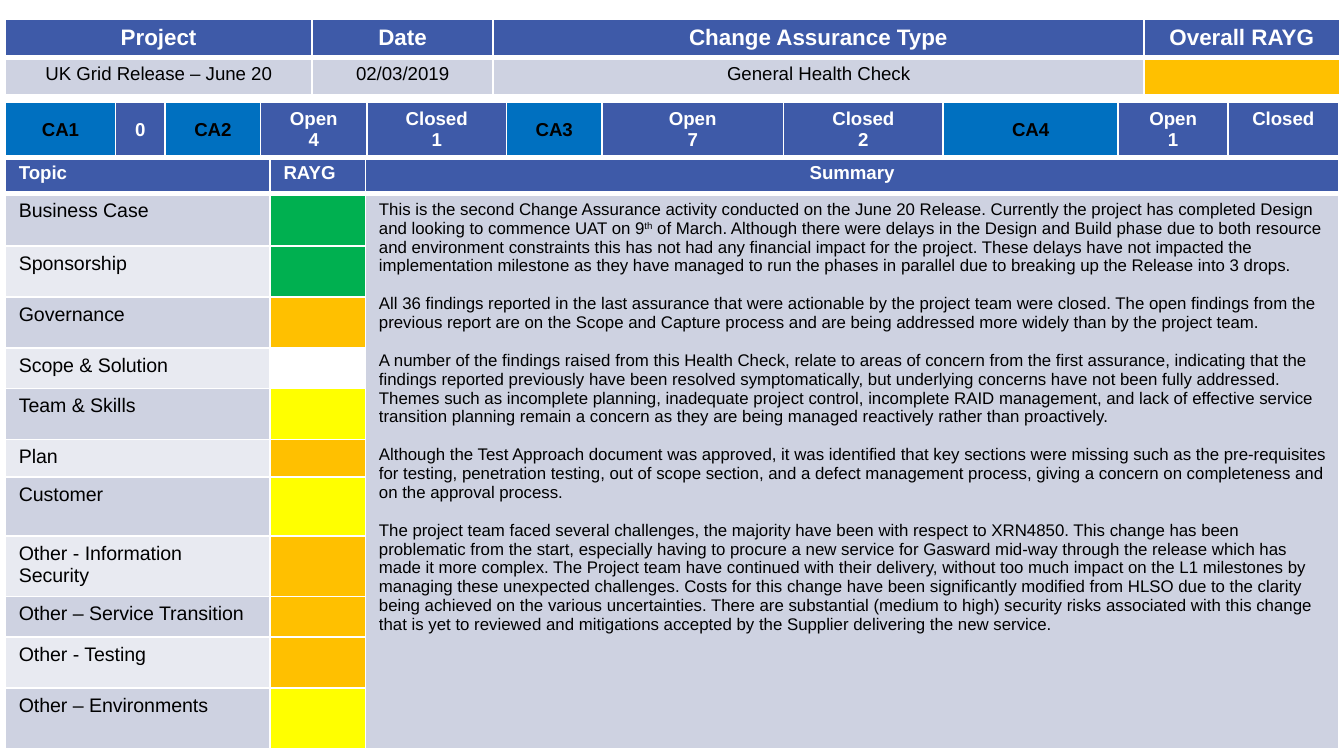
from dataclasses import dataclass

from lxml import etree
from pptx import Presentation
from pptx import util as u
from pptx.dml.color import RGBColor
from pptx.enum import text
from pptx.oxml.ns import qn


@dataclass(frozen=True)
class Theme:
    font: str = "Arial"
    white: str = "FFFFFF"
    black: str = "000000"
    header: str = "3E5AA8"
    activity: str = "0070C0"
    band_dark: str = "CED2E1"
    band_light: str = "E8EAF1"
    green: str = "00B050"
    amber: str = "FFC000"
    yellow: str = "FFFF00"
    title_size: float = 12
    label_size: float = 10
    topic_size: float = 10.5
    summary_size: float = 9
    summary_gap: float = 10.2
    thin: float = 1
    thick: float = 3


THEME = Theme()
CENTER = text.PP_ALIGN.CENTER
LEFT, WIDTH = 0.04, 9.92

PROJECT = [
    ("Project", "UK Grid Release – June 20"),
    ("Date", "02/03/2019"),
    ("Change Assurance Type", "General Health Check"),
    ("Overall RAYG", ""),
]
FINDINGS = ["CA1", "0", "CA2", "Open\n4", "Closed\n1", "CA3", "Open\n7",
            "Closed\n2", "CA4", "Open\n1", "Closed"]
# Topic, rating colour, row height
TOPICS = [
    ("Business Case", THEME.green, 0.39),
    ("Sponsorship", THEME.green, 0.38),
    ("Governance", THEME.amber, 0.38),
    ("Scope & Solution", None, 0.3),
    ("Team & Skills", THEME.yellow, 0.38),
    ("Plan", THEME.amber, 0.28),
    ("Customer", THEME.yellow, 0.44),
    ("Other - Information Security", THEME.amber, 0.45),
    ("Other – Service Transition", THEME.amber, 0.3),
    ("Other - Testing", THEME.amber, 0.38),
    ("Other – Environments", THEME.yellow, 0.45),
]
# A caret pair encloses superscript text
SUMMARY = [
    "This is the second Change Assurance activity conducted on the June 20 Release. Currently the project has completed Design and looking to commence UAT on 9^th^ of March. Although there were delays in the Design and Build phase due to both resource and environment constraints this has not had any financial impact for the project. These delays have not impacted the implementation milestone as they have managed to run the phases in parallel due to breaking up the Release into 3 drops.",
    "All 36 findings reported in the last assurance that were actionable by the project team were closed. The open findings from the previous report are on the Scope and Capture process and are being addressed more widely than by the project team.",
    "A number of the findings raised from this Health Check, relate to areas of concern from the first assurance, indicating that the findings reported previously have been resolved symptomatically, but underlying concerns have not been fully addressed. Themes such as incomplete planning, inadequate project control, incomplete RAID management, and lack of effective service transition planning remain a concern as they are being managed reactively rather than proactively.",
    "Although the Test Approach document was approved, it was identified that key sections were missing such as the pre-requisites for testing, penetration testing, out of scope section, and a defect management process, giving a concern on completeness and on the approval process.",
    "The project team faced several challenges, the majority have been with respect to XRN4850. This change has been problematic from the start, especially having to procure a new service for Gasward mid-way through the release which has made it more complex. The Project team have continued with their delivery, without too much impact on the L1 milestones by managing these unexpected challenges. Costs for this change have been significantly modified from HLSO due to the clarity being achieved on the various uncertainties. There are substantial (medium to high) security risks associated with this change that is yet to reviewed and mitigations accepted by the Supplier delivering the new service.",
]


def add_grid(page, top, widths, heights):
    """Add an unstyled table with the given column widths and row heights."""
    frame = page.shapes.add_table(
        len(heights), len(widths), u.Inches(LEFT), u.Inches(top),
        u.Inches(WIDTH), u.Inches(sum(heights)))
    table = frame.table
    table.first_row = table.horz_banding = False
    for column, width in zip(table.columns, widths):
        column.width = u.Inches(width)
    for row, height in zip(table.rows, heights):
        row.height = u.Inches(height)
    return table


def paint_cell(cell, fill, bottom=THEME.thin):
    """Give a cell white borders and a fill, or no fill for None."""
    properties = cell._tc.get_or_add_tcPr()
    for side in ("lnL", "lnR", "lnT", "lnB"):
        points = bottom if side == "lnB" else THEME.thin
        line = etree.SubElement(properties, qn("a:" + side), w=str(u.Pt(points)))
        solid = etree.SubElement(line, qn("a:solidFill"))
        etree.SubElement(solid, qn("a:srgbClr"), val=THEME.white)
    if fill:
        cell.fill.solid()
        cell.fill.fore_color.rgb = RGBColor.from_string(fill)
    else:
        cell.fill.background()


def format_span(span, size, color, bold):
    span.font.name = THEME.font
    span.font.size = u.Pt(size)
    span.font.bold = bold
    span.font.color.rgb = RGBColor.from_string(color)


def write_cell(cell, words, size, color=THEME.black, bold=False, align=None):
    """Write words into a cell; an empty cell still keeps the type size."""
    cell.text_frame.text = words
    for para in cell.text_frame.paragraphs:
        para.alignment = align
        for span in para.runs:
            format_span(span, size, color, bold)
        if not para.runs:
            etree.SubElement(para._p, qn("a:endParaRPr"), sz=str(int(size * 100)))


def write_summary(cell):
    cell.margin_right = u.Inches(0.08)
    frame = cell.text_frame
    for index, passage in enumerate(SUMMARY):
        para = frame.add_paragraph() if index else frame.paragraphs[0]
        if index:
            para.space_before = u.Pt(THEME.summary_gap)
        for part, words in enumerate(passage.split("^")):
            span = para.add_run()
            span.text = words
            format_span(span, THEME.summary_size, THEME.black, False)
            if part % 2:
                span.font._element.set("baseline", "30000")


def add_project_table(page):
    table = add_grid(page, 0.14, [2.28, 1.35, 4.84, 1.46], [0.28, 0.28])
    for column, (heading, value) in enumerate(PROJECT):
        head, body = table.cell(0, column), table.cell(1, column)
        paint_cell(head, THEME.header, bottom=THEME.thick)
        write_cell(head, heading, THEME.title_size, THEME.white, True, CENTER)
        paint_cell(body, THEME.band_dark if value else THEME.amber)
        write_cell(body, value, THEME.label_size, align=CENTER)


def add_findings_table(page):
    widths = [0.82, 0.37, 0.71, 0.79, 1.04, 0.71, 1.35, 1.19, 1.3, 0.82, 0.82]
    table = add_grid(page, 0.76, widths, [0.4])
    for cell, words in zip(table.rows[0].cells, FINDINGS):
        activity = words.startswith("CA")
        paint_cell(cell, THEME.activity if activity else THEME.header,
                   bottom=THEME.thick)
        write_cell(cell, words, THEME.label_size,
                   THEME.black if activity else THEME.white, True, CENTER)
        # A status without a count lines up with the other status words
        top = words == "Closed"
        cell.vertical_anchor = text.MSO_ANCHOR.TOP if top else text.MSO_ANCHOR.MIDDLE


def add_topic_table(page):
    heights = [0.28] + [height for _, _, height in TOPICS]
    table = add_grid(page, 1.16, [1.97, 0.71, 7.24], heights)

    # Headings
    for cell, heading, align in zip(table.rows[0].cells,
                                    ["Topic", "RAYG", "Summary"],
                                    [None, None, CENTER]):
        paint_cell(cell, THEME.header, bottom=THEME.thick)
        write_cell(cell, heading, THEME.label_size, THEME.white, True, align)

    # Topics and ratings
    for row, (topic, rating, _) in enumerate(TOPICS, 1):
        band = THEME.band_dark if row % 2 else THEME.band_light
        for column, (words, fill) in enumerate([(topic, band), ("", rating)]):
            cell = table.cell(row, column)
            paint_cell(cell, fill)
            write_cell(cell, words, THEME.topic_size)

    # Summary beside all topics
    summary = table.cell(1, 2)
    summary.merge(table.cell(len(TOPICS), 2))
    paint_cell(summary, THEME.band_dark)
    write_summary(summary)


def main():
    deck = Presentation()
    # Widescreen, 16:9
    deck.slide_width, deck.slide_height = u.Inches(10), u.Inches(10 * 9 / 16)
    page = deck.slides.add_slide(deck.slide_layouts[6])
    add_topic_table(page)
    add_project_table(page)
    add_findings_table(page)
    deck.save("out.pptx")


if __name__ == "__main__":
    main()
